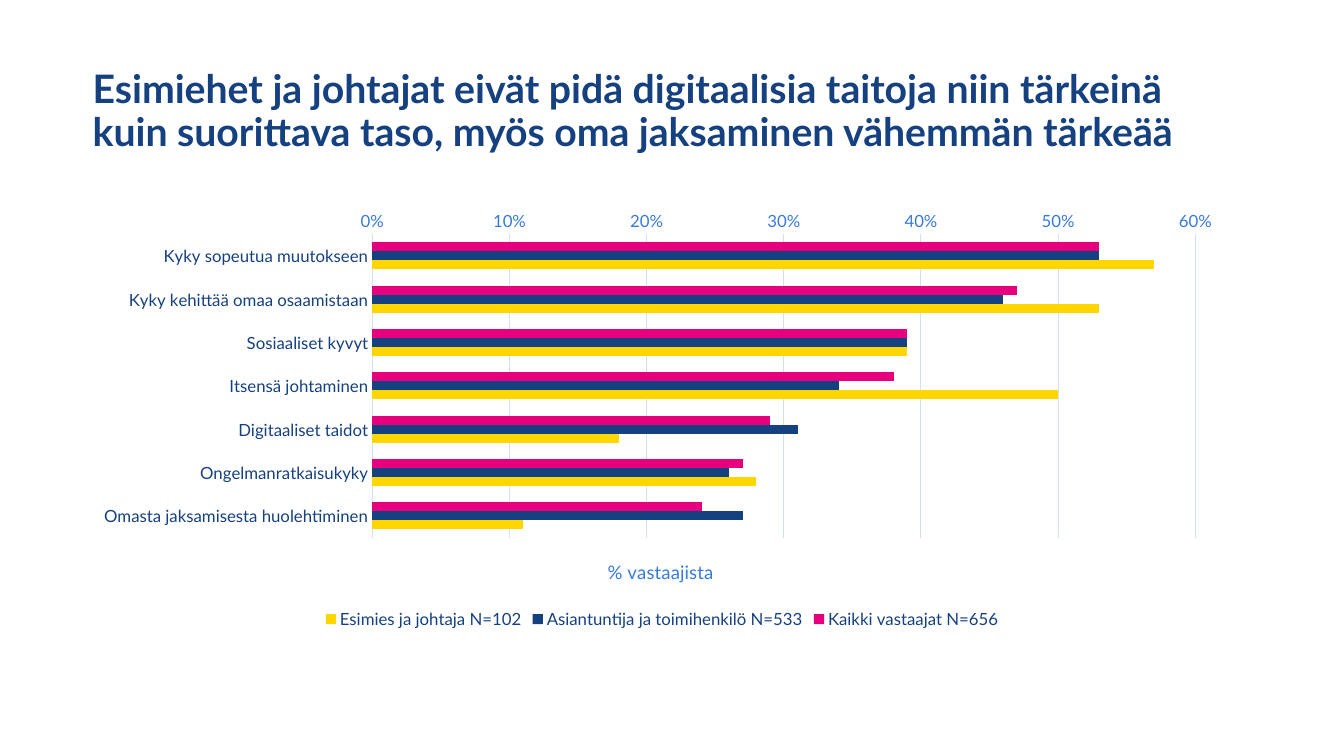
from dataclasses import dataclass

from lxml.etree import SubElement
from pptx import Presentation
from pptx.chart.data import CategoryChartData
from pptx.dml.color import RGBColor
from pptx.enum.chart import XL_CHART_TYPE as ChartType
from pptx.enum.chart import XL_LEGEND_POSITION as LegendPos
from pptx.enum.chart import XL_TICK_MARK as Tick
from pptx.enum.text import MSO_ANCHOR, MSO_AUTO_SIZE, PP_ALIGN
from pptx.oxml.ns import qn
from pptx.util import Pt


@dataclass(frozen=True)
class Theme:
    font: str = "Lato"
    navy: str = "164180"
    blue: str = "377ADD"
    pale: str = "D1E0F7"
    pink: str = "E6007E"
    yellow: str = "FFD600"
    title: float = 28
    axis_title: float = 13.3
    label: float = 12
    base: float = 10
    line: float = 0.75


@dataclass(frozen=True)
class Group:
    name: str
    shares: tuple[float, ...]
    color: str


THEME = Theme()
TITLE = ("Esimiehet ja johtajat eivät pidä digitaalisia taitoja niin tärkeinä "
         "kuin suorittava taso, myös oma jaksaminen vähemmän tärkeää")
SKILLS = (
    "Kyky sopeutua muutokseen",
    "Kyky kehittää omaa osaamistaan",
    "Sosiaaliset kyvyt",
    "Itsensä johtaminen",
    "Digitaaliset taidot",
    "Ongelmanratkaisukyky",
    "Omasta jaksamisesta huolehtiminen",
)
GROUPS = (
    Group("Kaikki vastaajat N=656",
          (0.53, 0.47, 0.39, 0.38, 0.29, 0.27, 0.24), THEME.pink),
    Group("Asiantuntija ja toimihenkilö N=533",
          (0.53, 0.46, 0.39, 0.34, 0.31, 0.26, 0.27), THEME.navy),
    Group("Esimies ja johtaja N=102",
          (0.57, 0.53, 0.39, 0.5, 0.18, 0.28, 0.11), THEME.yellow),
)
LEFT, WIDTH = Pt(59), Pt(828)


def style_font(font, size: float, color: str, bold: bool = False) -> None:
    font.name = THEME.font
    font.size = Pt(size)
    font.bold = bold
    font.color.rgb = RGBColor.from_string(color)


def style_line(line, color: str) -> None:
    line.color.rgb = RGBColor.from_string(color)
    line.width = Pt(THEME.line)


def place(element, index: int, **values: str | float) -> None:
    """Give a chart part a manual layout, in fractions of the chart area."""
    for old in element.findall(qn("c:layout")):
        element.remove(old)
    layout = SubElement(element, qn("c:layout"))
    element.insert(index, layout)
    manual = SubElement(layout, qn("c:manualLayout"))
    for tag, value in values.items():
        SubElement(manual, qn(f"c:{tag}")).set("val", str(value))


def add_title(slide) -> None:
    s = slide.shapes.title
    s.left, s.top, s.width, s.height = LEFT, Pt(28), WIDTH, Pt(104.4)
    tf = s.text_frame
    tf.text = TITLE
    tf.word_wrap = True
    tf.auto_size = MSO_AUTO_SIZE.NONE
    tf.vertical_anchor = MSO_ANCHOR.MIDDLE
    p = tf.paragraphs[0]
    p.alignment = PP_ALIGN.LEFT
    p.line_spacing = 0.9
    style_font(p.runs[0].font, THEME.title, THEME.navy, bold=True)


def format_axes(chart) -> None:
    skills, shares = chart.category_axis, chart.value_axis
    for axis, color in ((skills, THEME.navy), (shares, THEME.blue)):
        axis.major_tick_mark = axis.minor_tick_mark = Tick.NONE
        style_font(axis.tick_labels.font, THEME.label, color)

    skills.reverse_order = True
    style_line(skills.format.line, THEME.pale)

    shares.minimum_scale, shares.maximum_scale, shares.major_unit = 0, 0.6, 0.1
    shares.tick_labels.number_format = "0%"
    shares.tick_labels.number_format_is_linked = False
    shares.format.line.fill.background()
    shares.has_major_gridlines = True
    style_line(shares.major_gridlines.format.line, THEME.pale)

    tf = shares.axis_title.text_frame
    tf.text = "% vastaajista"
    style_font(tf.paragraphs[0].runs[0].font, THEME.axis_title, THEME.blue)
    place(shares.axis_title._element, 1, xMode="edge", yMode="edge", x=0.45, y=0.82)


def add_chart(slide) -> None:
    data = CategoryChartData(number_format="0%")
    data.categories = SKILLS
    for group in GROUPS:
        data.add_series(group.name, group.shares)
    chart = slide.shapes.add_chart(
        ChartType.BAR_CLUSTERED, LEFT, Pt(142.6), WIDTH, Pt(309.6), data).chart
    chart.has_title = False
    style_font(chart.font, THEME.base, THEME.navy)

    plot = chart.plots[0]
    plot.gap_width, plot.overlap = 182, 0
    plot.vary_by_categories = False
    for series, group in zip(plot.series, GROUPS):
        series.format.fill.solid()
        series.format.fill.fore_color.rgb = RGBColor.from_string(group.color)

    format_axes(chart)
    chart.has_legend = True
    chart.legend.position = LegendPos.BOTTOM
    chart.legend.include_in_layout = False
    style_font(chart.legend.font, THEME.label, THEME.navy)
    plot_area = chart._chartSpace.find(f".//{qn('c:plotArea')}")
    place(plot_area, 0, layoutTarget="inner", xMode="edge", yMode="edge",
          x=0.25, y=0.08, w=0.71, h=0.7)


def main() -> None:
    prs = Presentation()
    prs.slide_width, prs.slide_height = Pt(960), Pt(540)
    slide = prs.slides.add_slide(prs.slide_layouts.get_by_name("Title Only"))
    add_title(slide)
    add_chart(slide)
    prs.save("out.pptx")


if __name__ == "__main__":
    main()
